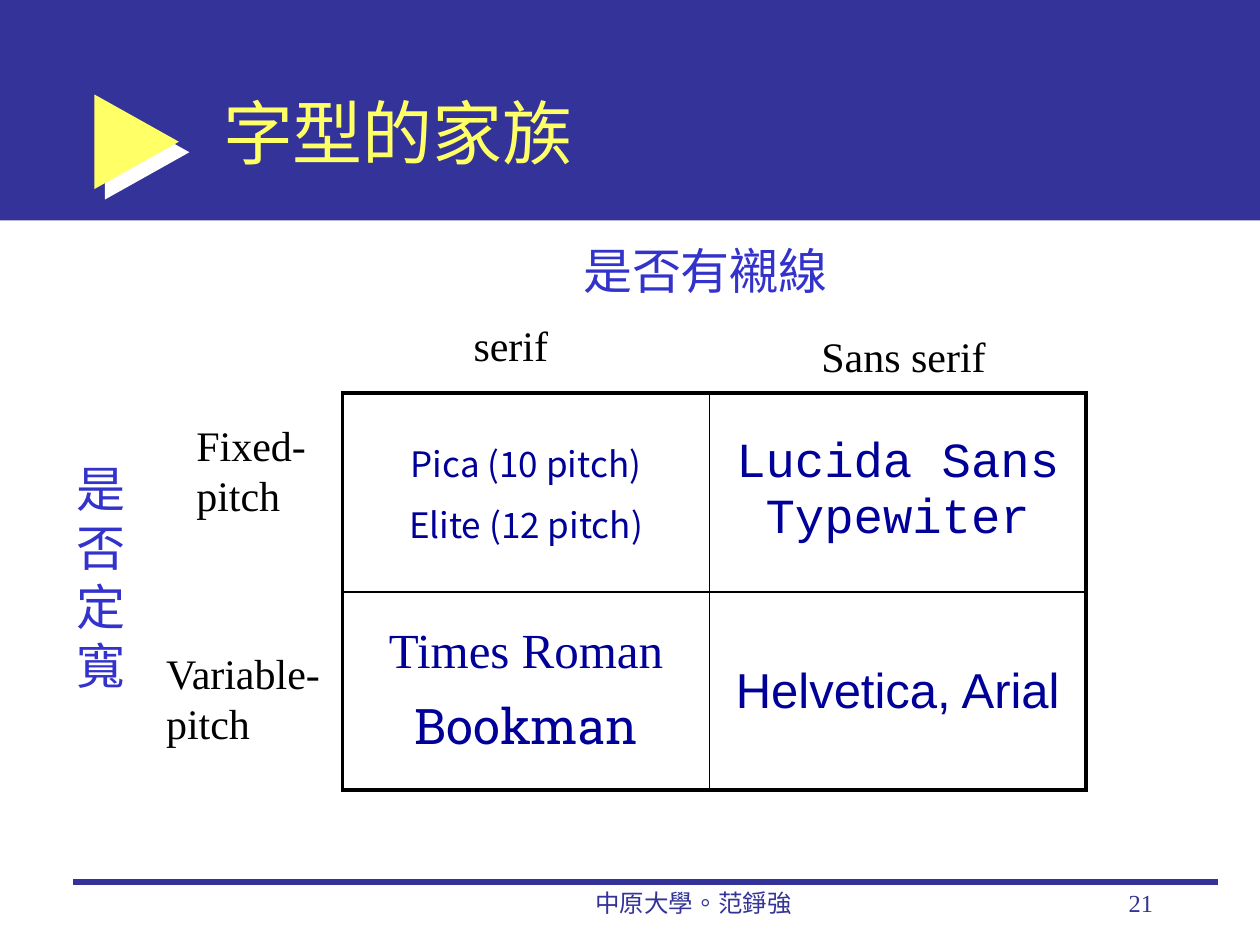
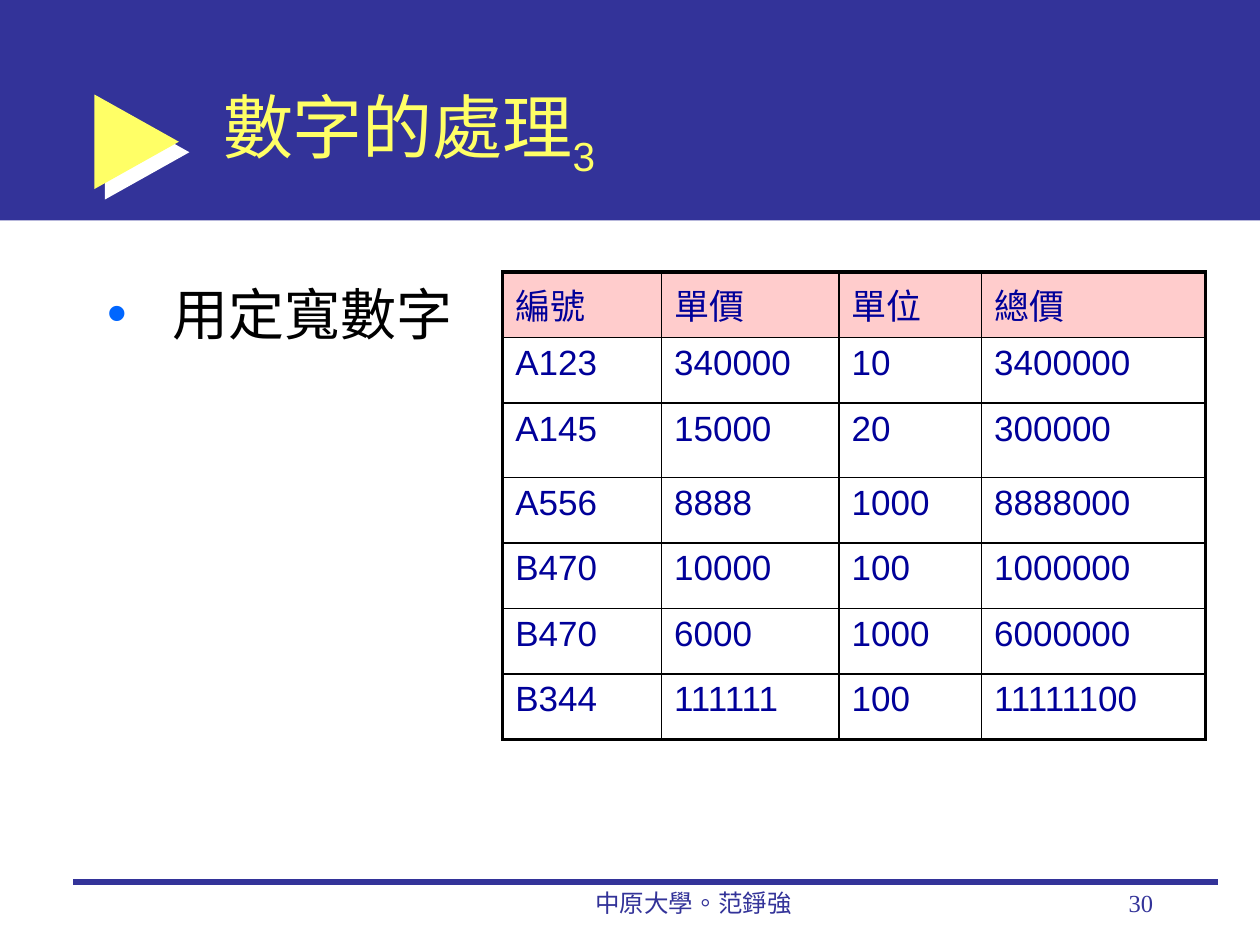
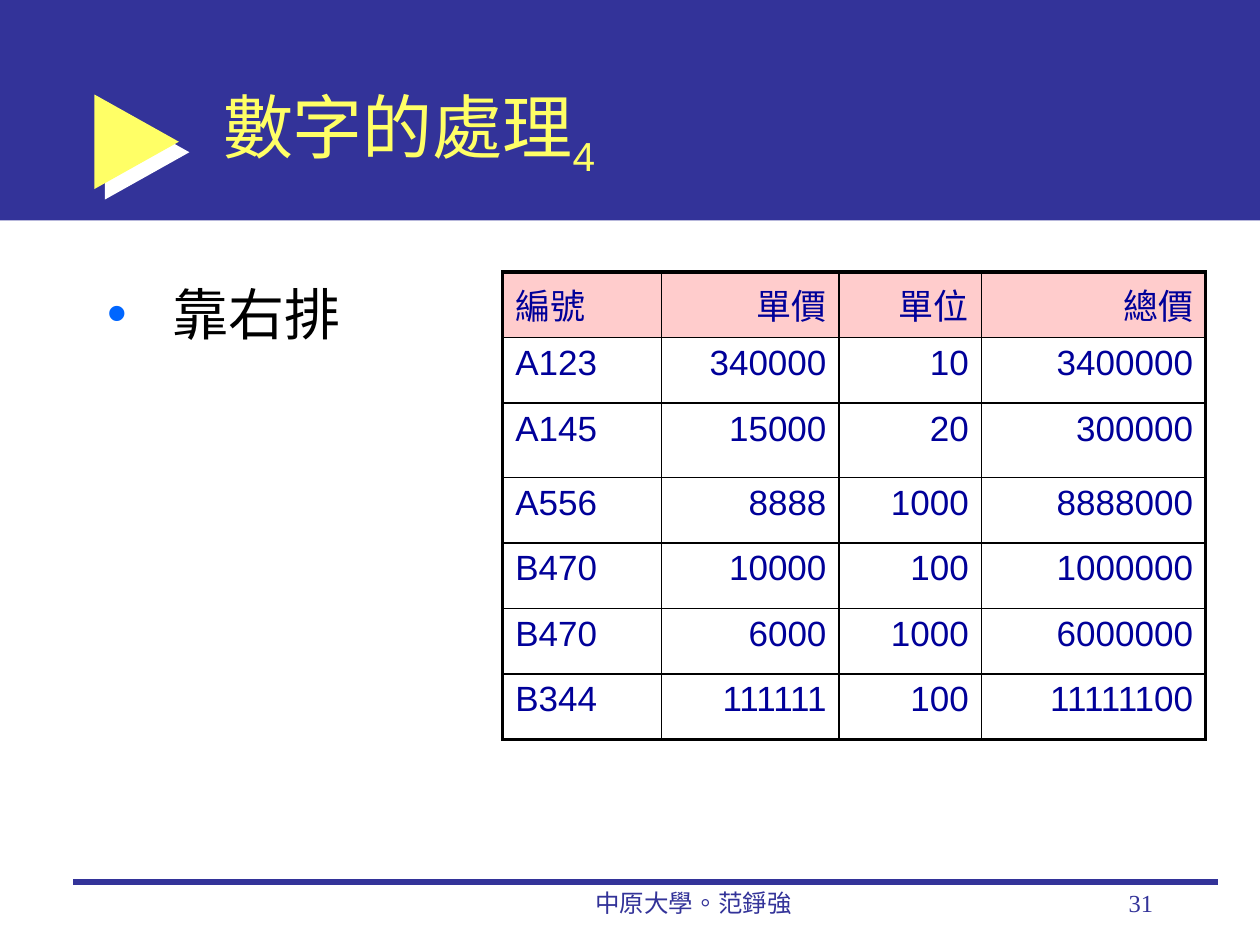
from dataclasses import dataclass

from lxml import etree
from pptx import Presentation
from pptx.dml.color import RGBColor
from pptx.enum.lang import MSO_LANGUAGE_ID
from pptx.enum.shapes import MSO_CONNECTOR, MSO_SHAPE
from pptx.enum.text import MSO_ANCHOR, MSO_AUTO_SIZE, PP_ALIGN
from pptx.oxml.ns import qn
from pptx.util import Inches, Pt

LEFT, CENTER, RIGHT = PP_ALIGN.LEFT, PP_ALIGN.CENTER, PP_ALIGN.RIGHT
MIDDLE, TOP = MSO_ANCHOR.MIDDLE, MSO_ANCHOR.TOP
NO_FIT = MSO_AUTO_SIZE.NONE
CHINESE = MSO_LANGUAGE_ID.TRADITIONAL_CHINESE
RECTANGLE, ARROW = MSO_SHAPE.RECTANGLE, MSO_SHAPE.RIGHT_ARROW
STRAIGHT = MSO_CONNECTOR.STRAIGHT
TITLE_AND_BODY, TITLE_ONLY = 1, 5


@dataclass(frozen=True)
class Theme:
    navy: str = "333399"
    yellow: str = "FFFF66"
    white: str = "FFFFFF"
    black: str = "000000"
    axis: str = "3333CC"
    cell: str = "000099"
    header: str = "FFCCCC"
    bullet: str = "0066FF"
    serif: str = "Times New Roman"
    sans: str = "Arial"
    mono: str = "Courier New"
    plain: str = "Noto Sans CJK SC"
    slab: str = "Roboto Slab"
    title_size: int = 40
    body_size: int = 32
    large_size: int = 28
    label_size: int = 24
    table_size: int = 20
    footer_size: int = 14
    outer_line: float = 2.25
    inner_line: float = 1
    gap: float = 0.3


THEME = Theme()
FOOTER = "中原大學。范錚強"

FAMILIES = [
    [[("Pica (10 pitch)", THEME.plain, THEME.table_size),
      ("Elite (12 pitch)", THEME.plain, THEME.table_size)],
     [("Lucida Sans Typewiter", THEME.mono, THEME.large_size)]],
    [[("Times Roman", THEME.serif, THEME.large_size),
      ("Bookman", THEME.slab, THEME.large_size)],
     [("Helvetica, Arial", THEME.sans, THEME.large_size)]],
]
FAMILY_AXES = [
    ("是否有襯線", (4.53, 1.86, 2.15, 0.57), False),
    ("是否定寬", (0.51, 3.59, 0.71, 1.97), True),
]
FAMILY_LABELS = [
    ("serif", (3.66, 2.49, 0.79, 0.5)),
    ("Sans serif", (6.42, 2.57, 1.52, 0.51)),
    ("Fixed-\npitch", (1.46, 3.28, 1.07, 0.9)),
    ("Variable-\npitch", (1.22, 5.09, 1.46, 0.9)),
]
PRICES = [
    ("編號", "單價", "單位", "總價"),
    ("A123", "340000", "10", "3400000"),
    ("A145", "15000", "20", "300000"),
    ("A556", "8888", "1000", "8888000"),
    ("B470", "10000", "100", "1000000"),
    ("B470", "6000", "1000", "6000000"),
    ("B344", "111111", "100", "11111100"),
]
PRICE_COLUMNS = (1.26, 1.41, 1.13, 1.78)
PRICE_ROWS = (0.52, 0.52, 0.59, 0.52, 0.52, 0.52, 0.52)
PRICE_SLIDES = [
    ("3", 30, "用定寬數字", LEFT),
    ("4", 31, "靠右排", RIGHT),
]


def rgb(color):
    return RGBColor.from_string(color)


def inches(values):
    return [Inches(value) for value in values]


def place(shape, area):
    shape.left, shape.top, shape.width, shape.height = inches(area)


def style(para, font, size, color, align=LEFT):
    para.alignment = align
    for span in para.runs:
        span.font.name = font
        span.font.size = Pt(size)
        span.font.color.rgb = rgb(color)
        span.font.language_id = CHINESE


def add_label(page, text, area, size, color, align=LEFT, wrap=False):
    box = page.shapes.add_textbox(*inches(area))
    box.text_frame.word_wrap = wrap
    box.text_frame.text = text
    for para in box.text_frame.paragraphs:
        style(para, THEME.serif, size, color, align)


def add_effects(shape):
    properties = shape.element.find(qn("p:spPr"))
    return etree.SubElement(properties, qn("a:effectLst"))


def decorate_master(deck, page):
    band = page.shapes.add_shape(RECTANGLE, *inches((0, 0, 10, 1.75)))
    arrow = page.shapes.add_shape(ARROW, *inches((0.75, 0.75, 0.67, 0.75)))
    arrow.adjustments[0], arrow.adjustments[1] = 0.38, 1
    for shape, color in ((band, THEME.navy), (arrow, THEME.yellow)):
        shape.fill.solid()
        shape.fill.fore_color.rgb = rgb(color)
        shape.line.fill.background()
    band.shadow.inherit = False
    shadow = etree.SubElement(add_effects(arrow), qn("a:outerShdw"), dist=str(Pt(8.5)),
                              dir="2700000", algn="ctr", rotWithShape="0")
    etree.SubElement(shadow, qn("a:srgbClr"), val=THEME.white)

    rule = page.shapes.add_connector(STRAIGHT, *inches((0.58, 7, 9.67, 7)))
    rule.line.color.rgb = rgb(THEME.navy)
    rule.line.width = Pt(3)
    add_effects(rule)

    tree = deck.slide_master.element.cSld.spTree
    for index, shape in enumerate((band, arrow, rule)):
        shape.element.xpath(".//p:cNvPr")[0].set("id", str(100 + index))
        tree.insert(2 + index, shape.element)


def add_page(deck, layout, title, number, subscript=""):
    page = deck.slides.add_slide(deck.slide_layouts[layout])
    heading = page.shapes.title
    place(heading, (1.67, 0.42, 7.58, 1.25))
    frame = heading.text_frame
    frame.auto_size = NO_FIT
    frame.vertical_anchor = MIDDLE
    frame.text = title
    para = frame.paragraphs[0]
    if subscript:
        span = para.add_run()
        span.text = subscript
        span.font._element.set("baseline", "-25000")
    style(para, THEME.sans, THEME.title_size, THEME.yellow)
    add_label(page, FOOTER, (3.92, 7, 3.17, 0.5), THEME.footer_size, THEME.navy, CENTER, True)
    add_label(page, str(number), (7.17, 7, 2.08, 0.5), THEME.footer_size, THEME.navy, RIGHT, True)
    return page


def add_grid(page, left, top, columns, rows):
    area = inches((left, top, sum(columns), sum(rows)))
    table = page.shapes.add_table(len(rows), len(columns), *area).table
    table.first_row = table.horz_banding = False
    for column, width in zip(table.columns, columns):
        column.width = Inches(width)
    for row, height in zip(table.rows, rows):
        row.height = Inches(height)
    return table


def finish_cell(table, row, column, fill=None, anchor=TOP):
    cell = table.cell(row, column)
    cell.vertical_anchor = anchor
    if fill:
        cell.fill.solid()
        cell.fill.fore_color.rgb = rgb(fill)
    else:
        cell.fill.background()
    outer_sides = {
        "a:lnL": column == 0,
        "a:lnR": column == len(table.columns) - 1,
        "a:lnT": row == 0,
        "a:lnB": row == len(table.rows) - 1,
    }
    properties = cell._tc.get_or_add_tcPr()
    for index, (tag, outer) in enumerate(outer_sides.items()):
        width = THEME.outer_line if outer else THEME.inner_line
        border = etree.Element(qn(tag), w=str(Pt(width)))
        paint = etree.SubElement(border, qn("a:solidFill"))
        etree.SubElement(paint, qn("a:srgbClr"), val=THEME.black)
        properties.insert(index, border)


def add_families(page):
    table = add_grid(page, 2.72, 3.12, (2.91, 2.99), (1.58, 1.57))
    for row, cells in enumerate(FAMILIES):
        for column, samples in enumerate(cells):
            frame = table.cell(row, column).text_frame
            frame.text = "\n".join(text for text, font, size in samples)
            for index, (para, sample) in enumerate(zip(frame.paragraphs, samples)):
                text, font, size = sample
                style(para, font, size, THEME.cell, CENTER)
                if index:
                    para.space_before = Pt(size * THEME.gap)
            finish_cell(table, row, column, anchor=MIDDLE)
    for text, area, wrap in FAMILY_AXES:
        add_label(page, text, area, THEME.large_size, THEME.axis, wrap=wrap)
    for text, area in FAMILY_LABELS:
        add_label(page, text, area, THEME.label_size, THEME.black)


def add_prices(page, number_align):
    table = add_grid(page, 3.99, 2.16, PRICE_COLUMNS, PRICE_ROWS)
    for row, values in enumerate(PRICES):
        font = THEME.sans if row else THEME.serif
        for column, value in enumerate(values):
            frame = table.cell(row, column).text_frame
            frame.text = value
            align = number_align if column else LEFT
            style(frame.paragraphs[0], font, THEME.table_size, THEME.cell, align)
            finish_cell(table, row, column, None if row else THEME.header)


def fill_body(page, text):
    body = page.placeholders[1]
    place(body, (0.75, 2.17, 3.82, 4.59))
    body.text_frame.auto_size = NO_FIT
    body.text_frame.text = text
    para = body.text_frame.paragraphs[0]
    para.space_before = Pt(0)
    properties = para._p.get_or_add_pPr()
    properties.set("marL", str(Inches(0.52)))
    properties.set("indent", str(-Inches(0.52)))
    color = etree.SubElement(properties, qn("a:buClr"))
    etree.SubElement(color, qn("a:srgbClr"), val=THEME.bullet)
    etree.SubElement(properties, qn("a:buChar"), char="•")
    style(para, THEME.serif, THEME.body_size, THEME.black)


def main():
    deck = Presentation()
    deck.slide_width, deck.slide_height = Inches(10), Inches(7.5)

    families = add_page(deck, TITLE_ONLY, "字型的家族", 21)
    decorate_master(deck, families)
    add_families(families)

    for subscript, number, point, align in PRICE_SLIDES:
        page = add_page(deck, TITLE_AND_BODY, "數字的處理", number, subscript)
        add_prices(page, align)
        fill_body(page, point)

    deck.save("out.pptx")


if __name__ == "__main__":
    main()
